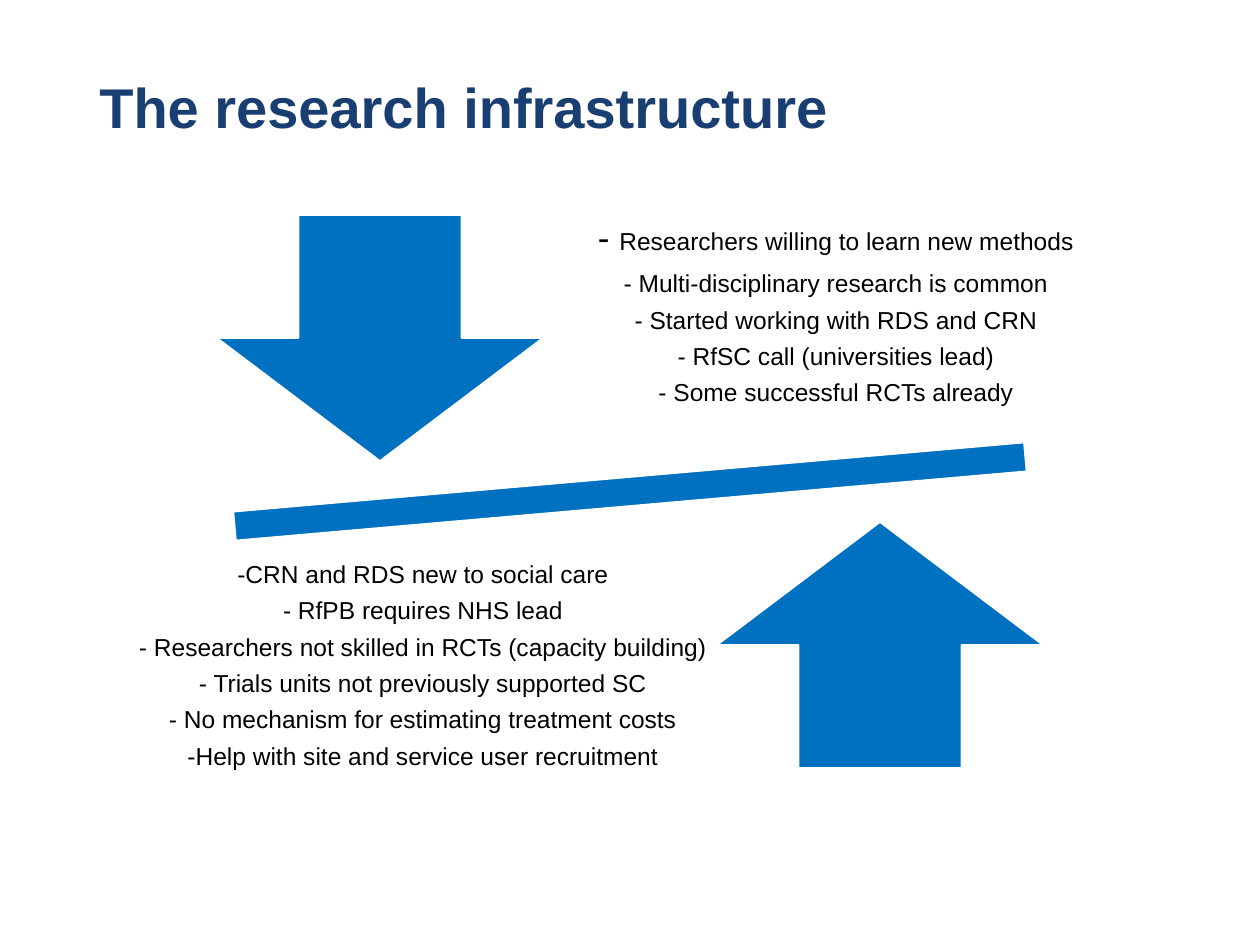
from dataclasses import dataclass

from pptx import Presentation
from pptx.dml.color import RGBColor
from pptx.enum.shapes import MSO_SHAPE
from pptx.enum.text import MSO_ANCHOR, PP_ALIGN
from pptx.util import Emu, Pt

LEFT, CENTER = PP_ALIGN.LEFT, PP_ALIGN.CENTER
MIDDLE = MSO_ANCHOR.MIDDLE
BEAM = MSO_SHAPE.MATH_MINUS
DOWN, UP = MSO_SHAPE.DOWN_ARROW, MSO_SHAPE.UP_ARROW

PX = 914400 // 126
SLIDE_SIZE = (1260, 945)


@dataclass(frozen=True)
class Theme:
    font: str = "Arial"
    navy: RGBColor = RGBColor(0x19, 0x3E, 0x72)
    blue: RGBColor = RGBColor(0x00, 0x70, 0xC0)
    black: RGBColor = RGBColor(0x00, 0x00, 0x00)
    white: RGBColor = RGBColor(0xFF, 0xFF, 0xFF)
    title: int = 32
    lead: int = 20
    body: int = 14
    outline: int = 1


THEME = Theme()

TITLE = "The research infrastructure"
STRENGTHS = [
    [("- ", THEME.lead), ("Researchers willing to learn new methods", THEME.body)],
    "- Multi-disciplinary research is common",
    "- Started working with RDS and CRN",
    "- RfSC call (universities lead)",
    "- Some successful RCTs already",
]
BARRIERS = [
    "-CRN and RDS new to social care",
    "- RfPB requires NHS lead",
    "- Researchers not skilled in RCTs (capacity building)",
    "- Trials units not previously supported SC",
    "- No mechanism for estimating treatment costs",
    "-Help with site and service user recruitment",
]
SEESAW = [
    (BEAM, (90, 430, 1080, 123), 355),
    (DOWN, (217, 215, 326, 246), 0),
    (UP, (717, 522, 326, 246), 0),
]


def scaled(lengths):
    return [Emu(length * PX) for length in lengths]


def add_text(slide, lines, box, *, size, color, bold=False, align=LEFT,
             margin=None, gap=0.0):
    frame = slide.shapes.add_textbox(*scaled(box)).text_frame
    frame.word_wrap = True
    frame.vertical_anchor = MIDDLE
    if margin is not None:
        frame.margin_left = frame.margin_right = Emu(margin * PX)
        frame.margin_top = frame.margin_bottom = Emu(margin * PX)
    for index, line in enumerate(lines):
        pieces = [(line, size)] if isinstance(line, str) else line
        paragraph = frame.add_paragraph() if index else frame.paragraphs[0]
        paragraph.alignment = align
        paragraph.line_spacing = 0.9
        paragraph.space_after = Pt(gap * max(points for _, points in pieces))
        for words, points in pieces:
            run = paragraph.add_run()
            run.text = words
            run.font.name = THEME.font
            run.font.size = Pt(points)
            run.font.bold = bold
            run.font.color.rgb = color


def add_seesaw_part(slide, preset, box, rotation):
    part = slide.shapes.add_shape(preset, *scaled(box))
    part.rotation = rotation
    part.shadow.inherit = False
    part.fill.solid()
    part.fill.fore_color.rgb = THEME.blue
    part.line.color.rgb = THEME.white
    part.line.width = Pt(THEME.outline)


def main():
    deck = Presentation()
    deck.slide_width, deck.slide_height = scaled(SLIDE_SIZE)
    slide = deck.slides.add_slide(deck.slide_layouts[6])

    add_text(slide, [TITLE], (87, 50, 1086, 120),
             size=THEME.title, color=THEME.navy, bold=True)
    for preset, box, rotation in SEESAW:
        add_seesaw_part(slide, preset, box, rotation)
    list_format = dict(size=THEME.body, color=THEME.black, align=CENTER, gap=0.4)
    add_text(slide, STRENGTHS, (537, 185, 598, 257), margin=20, **list_format)
    add_text(slide, BARRIERS, (68, 548, 710, 237), margin=18, **list_format)

    deck.save("out.pptx")


if __name__ == "__main__":
    main()
